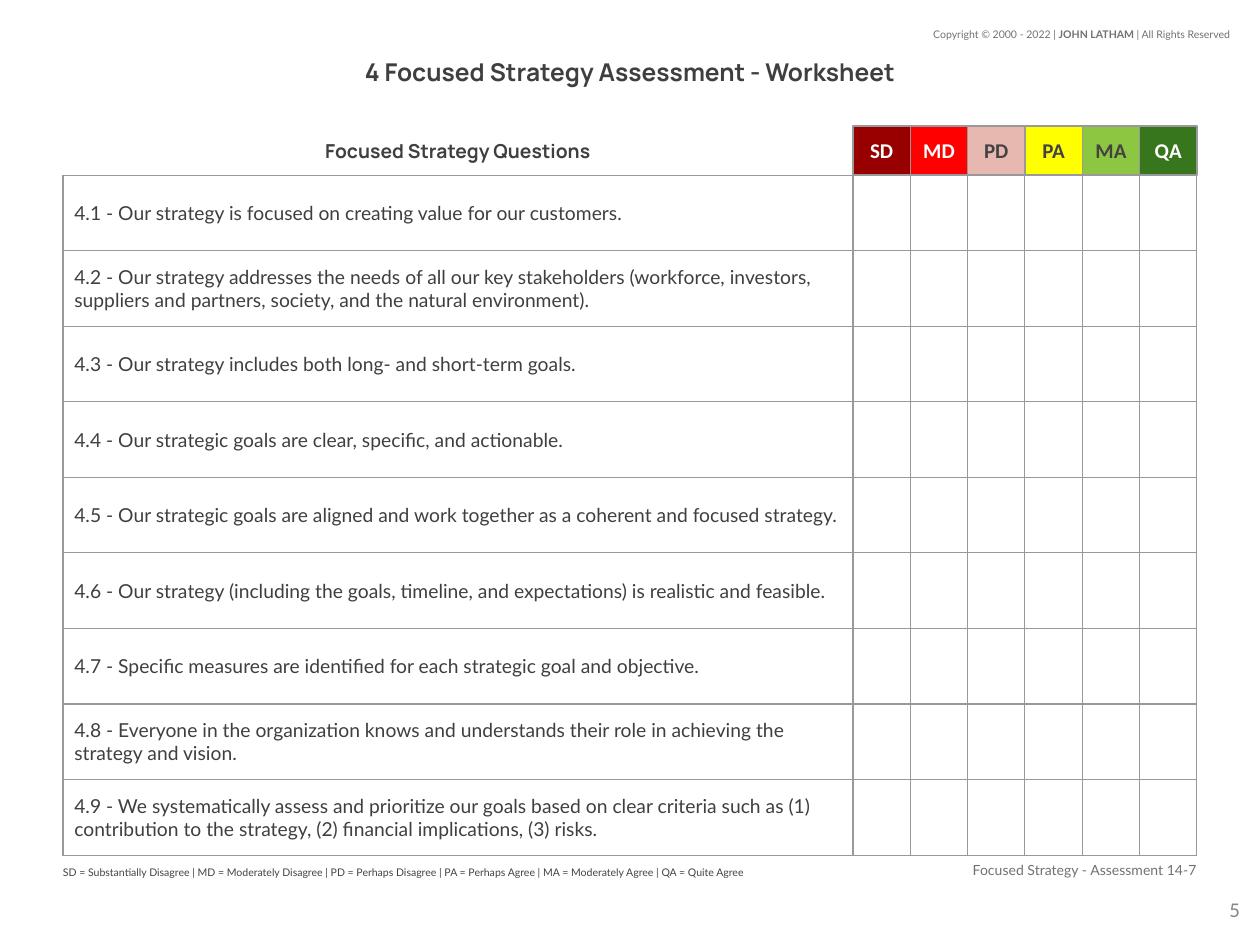
from dataclasses import dataclass

import pptx
import pptx.dml.color
import pptx.enum.shapes
import pptx.enum.text
import pptx.oxml
import pptx.oxml.ns
import pptx.util
from pptx.util import Inches

ALIGN = pptx.enum.text.PP_ALIGN
MIDDLE = pptx.enum.text.MSO_ANCHOR.MIDDLE


@dataclass(frozen=True)
class Theme:
    """Fonts, colours and type sizes of the worksheet."""
    heading: str = "Manrope"
    body: str = "Lato"
    label: str = "Calibri"
    ink: str = "3F3F3F"
    dark: str = "434343"
    muted: str = "757070"
    number: str = "888888"
    white: str = "FFFFFF"
    grid: str = "999999"
    title_size: float = 14
    label_size: float = 12
    body_size: float = 11
    footer_size: float = 8
    small_size: float = 6
    line: float = 0.75


THEME = Theme()
LEFT, TOP, HEADER_HEIGHT = 0.5, 1, 0.39
QUESTION_WIDTH, RATING_WIDTH, ROW_HEIGHT = 6.27, 2.73, 0.6
RATINGS = [
    ("SD", "980000", THEME.white),
    ("MD", "FF0000", THEME.white),
    ("PD", "E6B8AF", THEME.dark),
    ("PA", "FFFF00", THEME.dark),
    ("MA", "8DC640", THEME.dark),
    ("QA", "38761D", THEME.white),
]
COLUMN_WIDTH = RATING_WIDTH / len(RATINGS)
QUESTIONS = [
    "Our strategy is focused on creating value for our customers.",
    "Our strategy addresses the needs of all our key stakeholders (workforce, investors, "
    "suppliers and partners, society, and the natural environment).",
    "Our strategy includes both long- and short-term goals.",
    "Our strategic goals are clear, specific, and actionable.",
    "Our strategic goals are aligned and work together as a coherent and focused strategy.",
    "Our strategy (including the goals, timeline, and expectations) is realistic and feasible.",
    "Specific measures are identified for each strategic goal and objective.",
    "Everyone in the organization knows and understands their role in achieving the "
    "strategy and vision.",
    "We systematically assess and prioritize our goals based on clear criteria such as (1) "
    "contribution to the strategy, (2) financial implications, (3) risks.",
]
LEGEND = ("SD = Substantially Disagree | MD = Moderately Disagree | PD = Perhaps Disagree | "
          "PA = Perhaps Agree | MA = Moderately Agree | QA = Quite Agree")


def rgb(color):
    """Turn a hex string into a colour."""
    return pptx.dml.color.RGBColor.from_string(color)


def style(p, font, size, color, bold=False, align=ALIGN.LEFT):
    """Format a whole paragraph."""
    p.alignment = align
    p.font.name, p.font.size, p.font.bold = font, pptx.util.Pt(size), bold
    p.font.color.rgb = rgb(color)


def set_frame(tf, left=0.1, right=0.1, vertical=0.1):
    """Wrap and centre a text frame vertically, with the given insets."""
    tf.word_wrap = True
    tf.auto_size = pptx.enum.text.MSO_AUTO_SIZE.NONE
    tf.vertical_anchor = MIDDLE
    tf.margin_left, tf.margin_right = Inches(left), Inches(right)
    tf.margin_top = tf.margin_bottom = Inches(vertical)


def add_text(s, box, text, font, size, color, bold=False, align=ALIGN.LEFT, **insets):
    """Add a one-paragraph text box and return its paragraph."""
    tf = s.shapes.add_textbox(*map(Inches, box)).text_frame
    set_frame(tf, **insets)
    p = tf.paragraphs[0]
    p.text = text
    style(p, font, size, color, bold, align)
    return p


def add_title(s, text):
    """Place and format the title placeholder."""
    sp = s.shapes.title
    sp.left, sp.top, sp.width, sp.height = map(Inches, (LEFT, 0.42, 9, 0.3))
    sp.text_frame.text = text
    set_frame(sp.text_frame)
    style(sp.text_frame.paragraphs[0], THEME.heading, THEME.title_size, THEME.ink, True, ALIGN.CENTER)


def add_copyright(s):
    """Add the copyright line with its holder in bold."""
    p = add_text(s, (7.28, 0.17, 2.58, 0.2), "Copyright © 2000 - 2022 | ", THEME.body,
                 THEME.small_size, THEME.muted, align=ALIGN.RIGHT, vertical=0.05)
    r = p.add_run()
    r.text, r.font.bold = "JOHN LATHAM ", True
    p.add_run().text = "| All Rights Reserved"


def add_rating(s, column, text, fill, color):
    """Add one coloured heading above a rating column."""
    left = LEFT + QUESTION_WIDTH + column * COLUMN_WIDTH
    sp = s.shapes.add_shape(pptx.enum.shapes.MSO_SHAPE.RECTANGLE,
                            *map(Inches, (left, TOP, COLUMN_WIDTH, HEADER_HEIGHT)))
    sp.shadow.inherit = False
    sp.fill.solid()
    sp.fill.fore_color.rgb = rgb(fill)
    sp.line.color.rgb = rgb(THEME.grid)
    sp.line.width = pptx.util.Pt(THEME.line)
    set_frame(sp.text_frame)
    p = sp.text_frame.paragraphs[0]
    p.text = text
    style(p, THEME.label, THEME.label_size, color, True, ALIGN.CENTER)


def format_cell(cell):
    """Give a cell grid borders, no fill, insets and middle anchoring."""
    tc_pr = cell._tc.get_or_add_tcPr()
    for side in ("lnL", "lnR", "lnT", "lnB"):
        tc_pr.append(pptx.oxml.parse_xml(
            f'<a:{side} {pptx.oxml.ns.nsdecls("a")} w="{pptx.util.Pt(THEME.line)}">'
            f'<a:solidFill><a:srgbClr val="{THEME.grid}"/></a:solidFill></a:{side}>'))
    cell.fill.background()
    cell.vertical_anchor = MIDDLE
    cell.margin_left = cell.margin_right = Inches(0.09)
    cell.margin_top = cell.margin_bottom = Inches(0.09)


def add_questions(s):
    """Add the question table with empty rating cells."""
    size = (QUESTION_WIDTH + RATING_WIDTH, ROW_HEIGHT * len(QUESTIONS))
    table = s.shapes.add_table(len(QUESTIONS), len(RATINGS) + 1,
                               *map(Inches, (LEFT, TOP + HEADER_HEIGHT, *size))).table
    table.first_row = table.horz_banding = False
    for i, column in enumerate(table.columns):
        column.width = Inches(COLUMN_WIDTH if i else QUESTION_WIDTH)
    for cell in table.iter_cells():
        format_cell(cell)
        style(cell.text_frame.paragraphs[0], THEME.body, THEME.body_size, THEME.ink)
    for i, question in enumerate(QUESTIONS):
        table.cell(i, 0).text_frame.paragraphs[0].text = f"4.{i + 1} - {question}"


def main():
    """Build the assessment worksheet."""
    prs = pptx.Presentation()
    prs.slide_width, prs.slide_height = Inches(10), Inches(7.5)
    s = prs.slides.add_slide(prs.slide_layouts[5])
    add_copyright(s)
    add_title(s, "4 Focused Strategy Assessment - Worksheet")
    add_text(s, (LEFT, TOP, QUESTION_WIDTH, HEADER_HEIGHT), "Focused Strategy Questions",
             THEME.heading, THEME.body_size, THEME.ink, True, ALIGN.CENTER)
    add_questions(s)
    for column, rating in enumerate(RATINGS):
        add_rating(s, column, *rating)
    add_text(s, (LEFT, 6.78, QUESTION_WIDTH, 0.28), LEGEND, THEME.body, THEME.small_size,
             THEME.dark, left=0)
    add_text(s, (LEFT + QUESTION_WIDTH, 6.8, RATING_WIDTH, 0.21), "Focused Strategy - Assessment 14-7",
             THEME.body, THEME.footer_size, THEME.muted, align=ALIGN.RIGHT, right=0)
    add_text(s, (9.34, 6.93, 0.6, 0.57), "5", THEME.label, THEME.label_size, THEME.number,
             align=ALIGN.RIGHT)
    prs.save("out.pptx")


if __name__ == "__main__":
    main()
